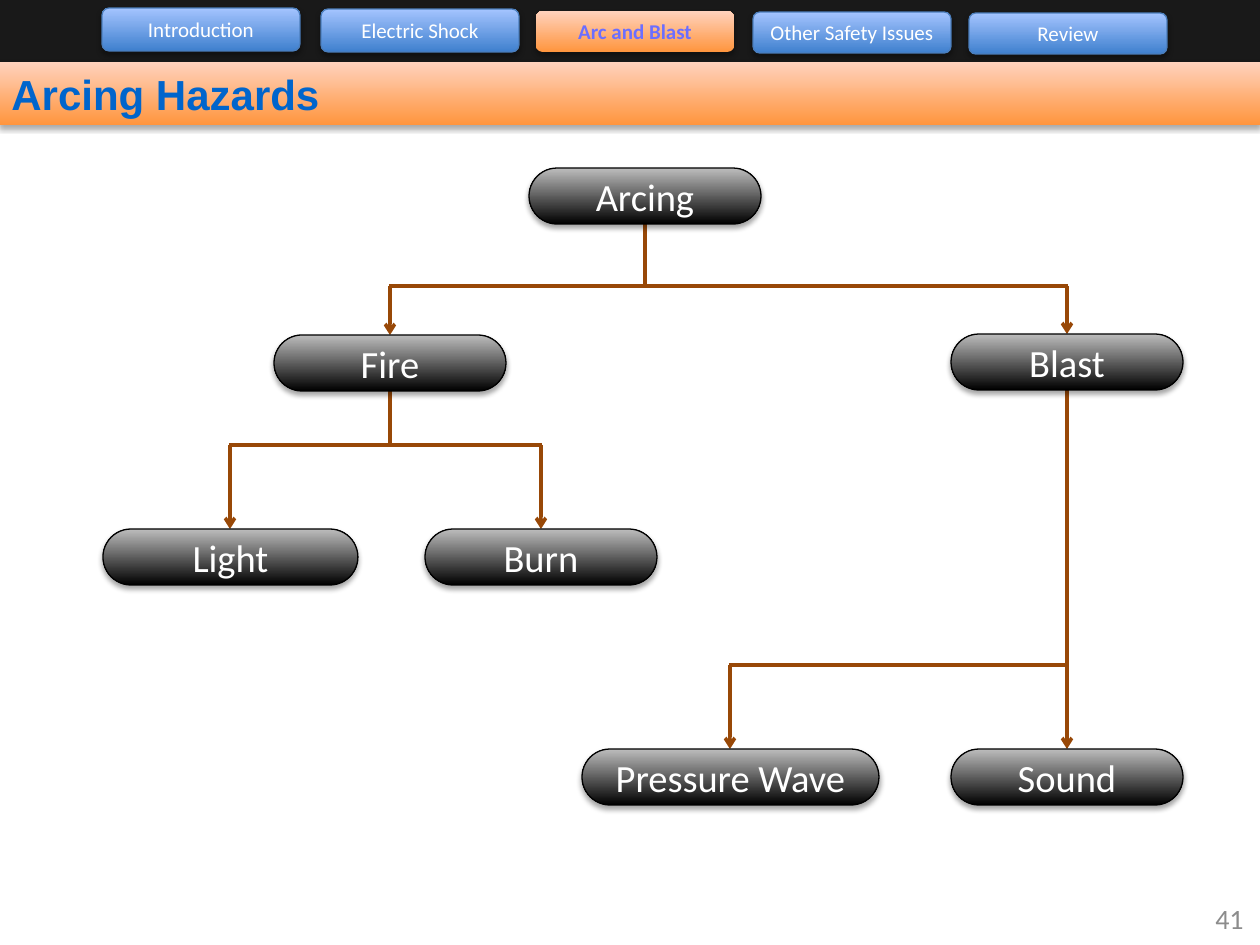
from dataclasses import dataclass

from lxml import etree
from pptx import Presentation
from pptx.dml.color import RGBColor
from pptx.enum.shapes import MSO_CONNECTOR, MSO_SHAPE
from pptx.enum.text import MSO_ANCHOR, PP_ALIGN
from pptx.oxml.ns import qn
from pptx.util import Emu, Pt

RECTANGLE = MSO_SHAPE.RECTANGLE
ROUNDED = MSO_SHAPE.ROUNDED_RECTANGLE
STRAIGHT = MSO_CONNECTOR.STRAIGHT
LEFT, CENTER, RIGHT = PP_ALIGN.LEFT, PP_ALIGN.CENTER, PP_ALIGN.RIGHT
TOP, MIDDLE = MSO_ANCHOR.TOP, MSO_ANCHOR.MIDDLE

EMU_PER_PX = 914400 / 126
SLIDE_WIDTH, SLIDE_HEIGHT = 1260, 945


@dataclass(frozen=True)
class Theme:
    strip: str = "191919"
    blue: tuple = ("3F80CE", "A4C4FF")
    orange: tuple = ("FF953E", "FFD2BD")
    black: tuple = ("000000", "BDBDBD")
    tab_line: str = "4B7EBC"
    node_line: str = "000000"
    arrow: str = "984807"
    tab_text = {"name": "Calibri", "size": Pt(12), "color": "FFFFFF"}
    active_text = {"name": "Calibri", "size": Pt(12), "color": "6C6EFF", "bold": True}
    title_text = {"name": "Arial", "size": Pt(24), "color": "0065CC", "bold": True}
    node_text = {"name": "Calibri", "size": Pt(22), "color": "FFFFFF"}
    number_text = {"name": "Calibri", "size": Pt(16), "color": "8C8C8C"}


THEME = Theme()

# label, left, top, width, height
TABS = [
    ("Introduction", 102, 8, 198, 43),
    ("Electric Shock", 321, 9, 198, 43),
    ("Arc and Blast", 536, 11, 198, 41),
    ("Other Safety Issues", 753, 12, 198, 41),
    ("Review", 969, 13, 198, 41),
]
ACTIVE_TAB = "Arc and Blast"

# label: left, top, width (relative to the diagram box)
NODES = {
    "Arcing": (529, 42, 232),
    "Fire": (274, 209, 232),
    "Blast": (951, 208, 232),
    "Light": (103, 403, 255),
    "Burn": (425, 403, 232),
    "Pressure Wave": (582, 623, 297),
    "Sound": (951, 623, 232),
}
NODE_HEIGHT = 56

# parent, children, height of the crossbar
BRANCHES = [
    ("Arcing", ("Fire", "Blast"), 160),
    ("Fire", ("Light", "Burn"), 319),
    ("Blast", ("Pressure Wave", "Sound"), 539),
]


def px(*lengths):
    return [Emu(round(length * EMU_PER_PX)) for length in lengths]


def write(shape, text, style, align=CENTER, anchor=MIDDLE):
    frame = shape.text_frame
    frame.word_wrap = True
    frame.vertical_anchor = anchor
    paragraph = frame.paragraphs[0]
    paragraph.alignment = align
    run = paragraph.add_run()
    run.text = text
    for name, value in style.items():
        if name == "color":
            run.font.color.rgb = RGBColor.from_string(value)
        else:
            setattr(run.font, name, value)


def add_soft_shadow(shape):
    effects = shape._element.spPr.find(qn("a:effectLst"))
    shadow = etree.SubElement(effects, qn("a:outerShdw"), blurRad=str(Pt(3.1)),
                              dist=str(Pt(1.8)), dir="5400000", rotWithShape="0")
    color = etree.SubElement(shadow, qn("a:srgbClr"), val="000000")
    etree.SubElement(color, qn("a:alpha"), val="35000")


def add_panel(slide, kind, box, gradient, line=None):
    """Add a shape shaded from bottom to top, with a soft shadow."""
    shape = slide.shapes.add_shape(kind, *px(*box))
    shape.fill.gradient()
    shape.fill.gradient_angle = 90
    for stop, color in zip(shape.fill.gradient_stops, gradient):
        stop.color.rgb = RGBColor.from_string(color)
    for stop, position in zip(shape.fill.gradient_stops, (0, 1)):
        stop.position = position
    if line:
        shape.line.color.rgb = RGBColor.from_string(line)
        shape.line.width = Pt(0.75)
    else:
        shape.line.fill.background()
    shape.shadow.inherit = False
    add_soft_shadow(shape)
    return shape


def add_line(slide, start, end, arrow=False):
    connector = slide.shapes.add_connector(STRAIGHT, *px(*start, *end))
    connector.line.color.rgb = RGBColor.from_string(THEME.arrow)
    connector.line.width = Pt(2)
    if arrow:
        etree.SubElement(connector.line._get_or_add_ln(), qn("a:tailEnd"), type="arrow")
    etree.SubElement(connector._element.spPr, qn("a:effectLst"))


def add_navigation(slide, left, top, width, height):
    strip = slide.shapes.add_shape(RECTANGLE, *px(left, top, width, height))
    strip.fill.solid()
    strip.fill.fore_color.rgb = RGBColor.from_string(THEME.strip)
    strip.line.fill.background()
    strip.shadow.inherit = False
    for label, x, y, tab_width, tab_height in TABS:
        active = label == ACTIVE_TAB
        tab = add_panel(slide, ROUNDED, (left + x, top + y, tab_width, tab_height),
                        THEME.orange if active else THEME.blue,
                        None if active else THEME.tab_line)
        write(tab, label, THEME.active_text if active else THEME.tab_text)


def add_title(slide, *box):
    bar = add_panel(slide, RECTANGLE, box, THEME.orange)
    write(bar, "Arcing Hazards", THEME.title_text, LEFT, TOP)


def add_branch(slide, left, top, parent, children, bar):
    """Link a parent to its children; a child straight below gets one long arrow."""
    def center(label):
        x, _, width = NODES[label]
        return left + x + width // 2

    trunk = center(parent)
    trunk_top = top + NODES[parent][1] + NODE_HEIGHT
    bar += top
    centers = [center(child) for child in children]
    if trunk not in centers:
        add_line(slide, (trunk, trunk_top), (trunk, bar))
    add_line(slide, (min(centers) - 1, bar), (max(centers) + 1, bar))
    for child, x in zip(children, centers):
        start = trunk_top if x == trunk else bar
        add_line(slide, (x, start), (x, top + NODES[child][1]), arrow=True)


def add_diagram(slide, left, top):
    for branch in BRANCHES:
        add_branch(slide, left, top, *branch)
    for label, (x, y, width) in NODES.items():
        node = add_panel(slide, ROUNDED, (left + x, top + y, width, NODE_HEIGHT),
                         THEME.black, THEME.node_line)
        node.adjustments[0] = 0.5
        write(node, label, THEME.node_text)


def add_page_number(slide, *box):
    write(slide.shapes.add_textbox(*px(*box)), "41", THEME.number_text, RIGHT)


def main():
    presentation = Presentation()
    presentation.slide_width, presentation.slide_height = px(SLIDE_WIDTH, SLIDE_HEIGHT)
    slide = presentation.slides.add_slide(presentation.slide_layouts[6])
    add_navigation(slide, 0, 0, SLIDE_WIDTH, 62)
    add_title(slide, -1, 62, SLIDE_WIDTH + 1, 63)
    add_diagram(slide, 0, 126)
    add_page_number(slide, 1194, 893, 62, 50)
    presentation.save("out.pptx")


if __name__ == "__main__":
    main()
